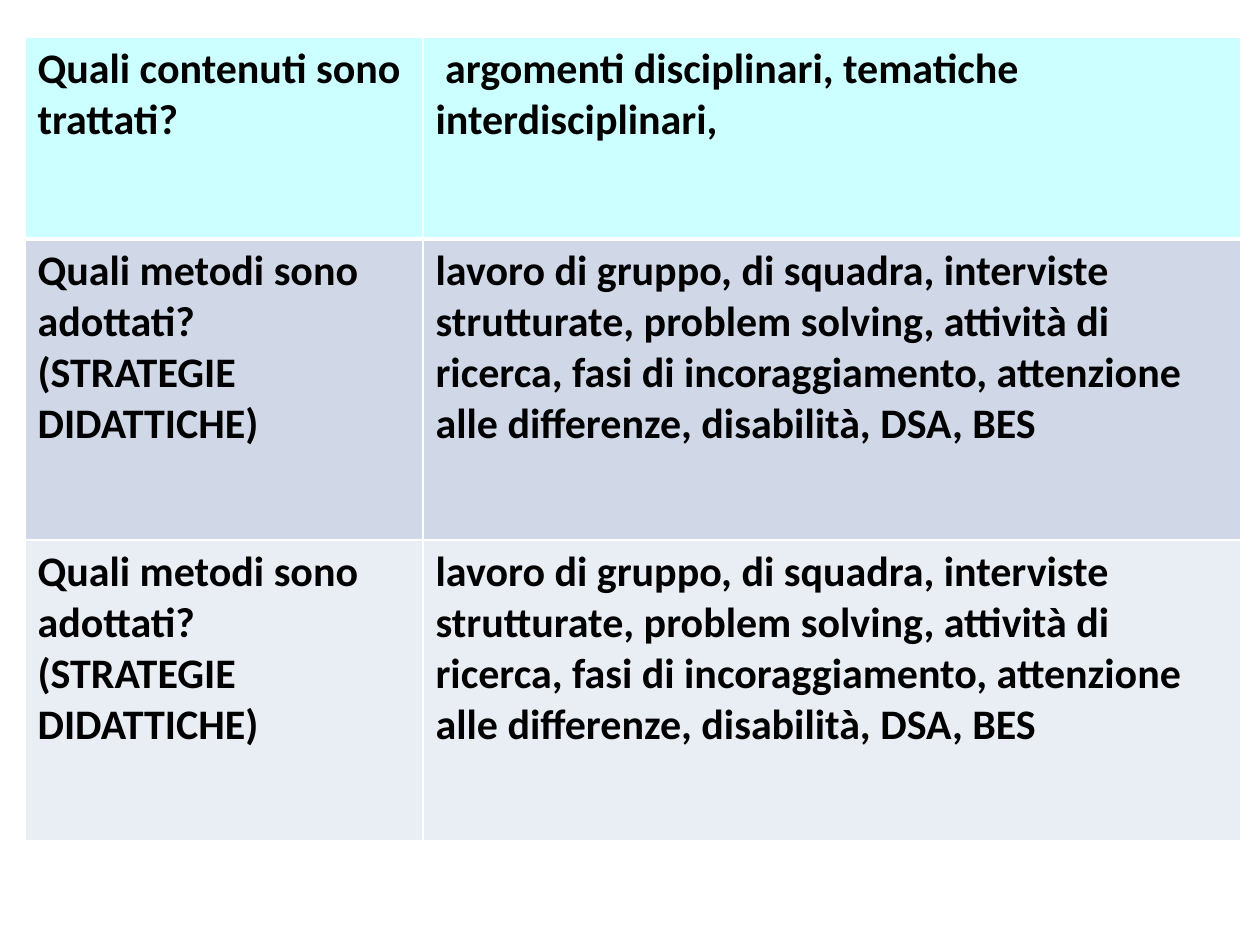
from dataclasses import dataclass

from lxml.etree import SubElement
from pptx import Presentation
from pptx.dml.color import RGBColor
from pptx.oxml.ns import qn
from pptx.util import Emu, Pt

PX_PER_INCH = 126
FONT, TEXT_SIZE, TEXT_COLOR = "Calibri", 24, "000000"
BORDER_COLOR = "FFFFFF"
THIN, THICK = 1, 3

LEFT, TOP = 25, 37
COL_WIDTHS = [398, 818]


@dataclass
class Row:
    height: int
    fill: str
    question: list[str]
    answer: list[str]
    top: int = THIN
    bottom: int = THIN


METHODS_QUESTION = ["Quali metodi sono adottati?", "(STRATEGIE DIDATTICHE)"]
METHODS_ANSWER = [
    "lavoro di gruppo, di squadra, interviste strutturate, problem solving, "
    "attività di ricerca, fasi di incoraggiamento, attenzione alle differenze, "
    "disabilità, DSA, BES"
]

ROWS = [
    Row(202, "CCFFFF", ["Quali contenuti sono trattati?"],
        [" argomenti disciplinari, tematiche interdisciplinari,"], bottom=THICK),
    Row(301, "D0D8E8", METHODS_QUESTION, METHODS_ANSWER, top=THICK),
    Row(301, "E9EDF4", METHODS_QUESTION, METHODS_ANSWER),
]


def px(n: int) -> Emu:
    return Emu(round(n * 914400 / PX_PER_INCH))


def color(value: str) -> RGBColor:
    return RGBColor.from_string(value)


def set_borders(cell, top: int, bottom: int) -> None:
    tc_pr = cell._tc.get_or_add_tcPr()
    widths = {"a:lnL": THIN, "a:lnR": THIN, "a:lnT": top, "a:lnB": bottom}
    for tag, width in widths.items():
        ln = SubElement(tc_pr, qn(tag), w=str(Pt(width)))
        fill = SubElement(ln, qn("a:solidFill"))
        SubElement(fill, qn("a:srgbClr"), val=BORDER_COLOR)


def write_cell(cell, paragraphs: list[str], row: Row) -> None:
    set_borders(cell, row.top, row.bottom)
    cell.fill.solid()
    cell.fill.fore_color.rgb = color(row.fill)
    tf = cell.text_frame
    for i, text in enumerate(paragraphs):
        p = tf.add_paragraph() if i else tf.paragraphs[0]
        r = p.add_run()
        r.text = text
        r.font.name = FONT
        r.font.size = Pt(TEXT_SIZE)
        r.font.bold = True
        r.font.color.rgb = color(TEXT_COLOR)


def add_question_table(s, rows: list[Row]) -> None:
    height = sum(row.height for row in rows)
    table = s.shapes.add_table(len(rows), len(COL_WIDTHS), px(LEFT), px(TOP),
                               px(sum(COL_WIDTHS)), px(height)).table
    for column, width in zip(table.columns, COL_WIDTHS):
        column.width = px(width)
    for i, row in enumerate(rows):
        table.rows[i].height = px(row.height)
        for j, paragraphs in enumerate((row.question, row.answer)):
            write_cell(table.cell(i, j), paragraphs, row)


def main() -> None:
    prs = Presentation()
    prs.slide_width, prs.slide_height = px(1260), px(945)
    s = prs.slides.add_slide(prs.slide_layouts[6])

    # Questions on the left, answers on the right
    add_question_table(s, ROWS)

    prs.save("out.pptx")


if __name__ == "__main__":
    main()
